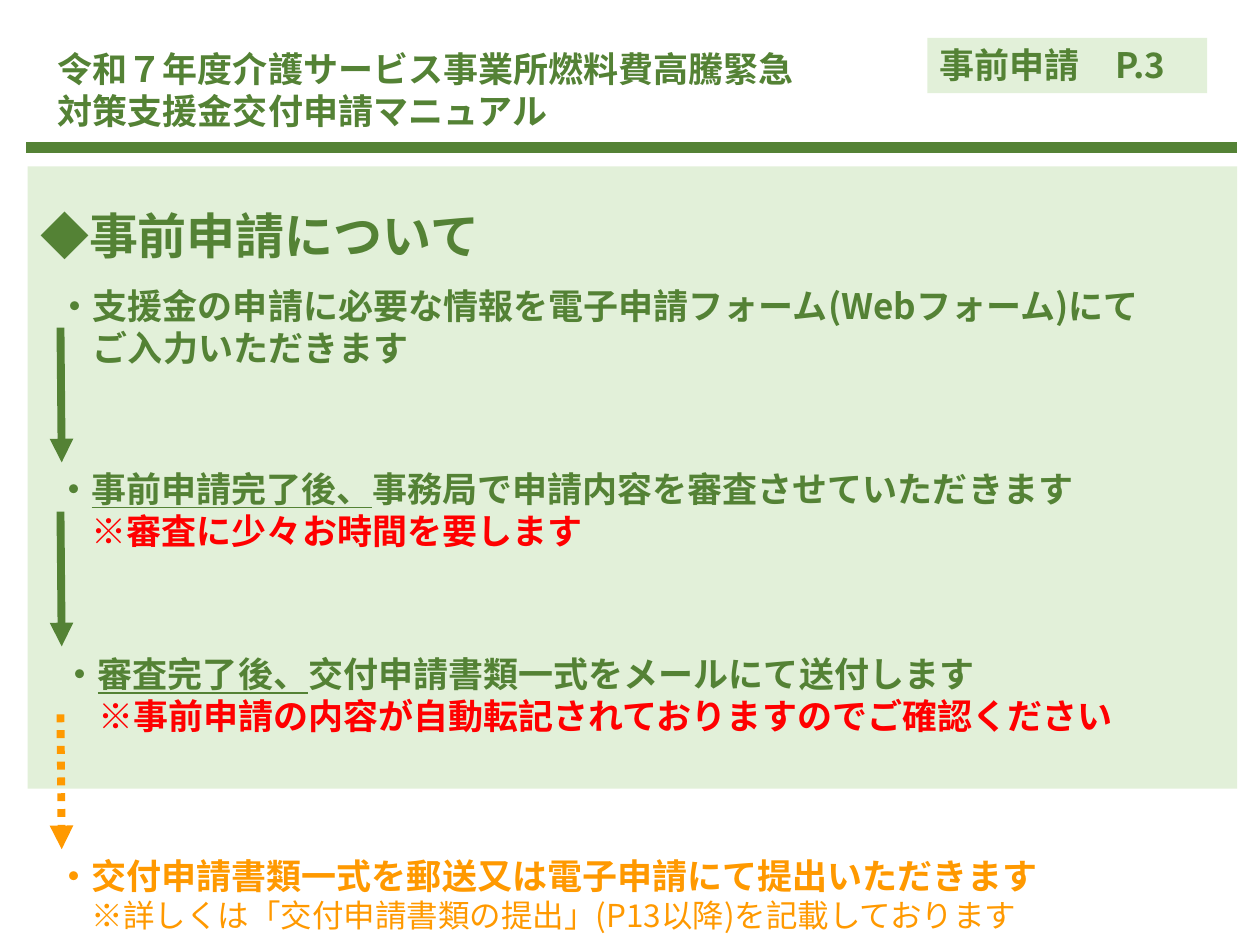
from dataclasses import dataclass
from lxml.etree import SubElement as Sub
from pptx import Presentation as Deck
from pptx.dml.color import RGBColor as Rgb
from pptx.enum.dml import MSO_LINE as Dash
from pptx.enum.shapes import MSO_CONNECTOR as Link, MSO_SHAPE as Form
from pptx.enum.text import MSO_ANCHOR as Anchor, MSO_AUTO_SIZE as Fit, PP_ALIGN as Align
from pptx.oxml.ns import qn
from pptx.util import Emu, Pt

SCALE = 9144


def px(n):
    return Emu(n * SCALE)


@dataclass(frozen=True)
class Theme:
    font: str = "Noto Sans CJK JP"
    green: str = "548235"
    pale: str = "E2F0D9"
    red: str = "FF0000"
    gold: str = "FF9900"
    head: int = 28
    body: int = 20
    note: int = 18
    rule: float = 6
    arrow: float = 4.5
    indent: int = 28


@dataclass(frozen=True)
class Run:
    text: str
    color: str
    size: int
    bold: bool = True
    under: bool = False


class Page:
    def __init__(self, slide, theme):
        self.slide = slide
        self.theme = theme

    def run(self, para, part):
        run = para.add_run()
        run.text = part.text
        font = run.font
        font.name = self.theme.font
        font.size = Pt(part.size)
        font.bold = part.bold
        font.underline = part.under
        font.color.rgb = Rgb.from_string(part.color)
        Sub(run._r.get_or_add_rPr(), qn("a:ea"), typeface=self.theme.font)

    def fill(self, frame, lines):
        frame.word_wrap = True
        frame.auto_size = Fit.SHAPE_TO_FIT_TEXT
        frame.vertical_anchor = Anchor.TOP
        for i, parts in enumerate(lines):
            para = frame.add_paragraph() if i else frame.paragraphs[0]
            para.alignment = Align.LEFT
            if i:
                para._p.get_or_add_pPr().set("marL", str(px(self.theme.indent)))
            for part in parts:
                self.run(para, part)

    def text(self, x, y, w, h, *lines):
        box = self.slide.shapes.add_textbox(px(x), px(y), px(w), px(h))
        self.fill(box.text_frame, lines)

    def panel(self, x, y, w, h, *lines):
        box = self.slide.shapes.add_shape(Form.RECTANGLE, px(x), px(y), px(w), px(h))
        box.shadow.inherit = False
        box.fill.solid()
        box.fill.fore_color.rgb = Rgb.from_string(self.theme.pale)
        box.line.fill.background()
        if lines:
            self.fill(box.text_frame, lines)

    def line(self, x, y, to_x, to_y, color, width):
        link = self.slide.shapes.add_connector(
            Link.STRAIGHT, px(x), px(y), px(to_x), px(to_y))
        link.line.color.rgb = Rgb.from_string(color)
        link.line.width = Pt(width)
        Sub(link._element.spPr, qn("a:effectLst"))
        return link.line

    def arrow(self, y, color, dash=None):
        line = self.line(48, y, 49, y + 107, color, self.theme.arrow)
        if dash:
            line.dash_style = dash
        Sub(line._get_or_add_ln(), qn("a:tailEnd"), type="triangle")


def main():
    deck = Deck()
    deck.slide_width, deck.slide_height = px(1000), px(750)
    look = Theme()
    page = Page(deck.slides.add_slide(deck.slide_layouts[6]), look)

    def green(text, under=False):
        return Run(text, look.green, look.body, under=under)

    def red(text):
        return Run(text, look.red, look.body)

    page.line(21, 117, 982, 117, look.green, look.rule)
    page.text(36, 33, 619, 77,
              [green("令和７年度介護サービス事業所燃料費高騰緊急対策支援金交付申請マニュアル")])
    page.panel(22, 132, 960, 494)
    page.text(22, 158, 665, 57, [Run("◆事前申請について", look.green, look.head)])
    page.panel(736, 30, 222, 44, [green("事前申請　P.3")])

    steps = [
        (36, 221,
         [green("・支援金の申請に必要な情報を電子申請フォーム(Webフォーム)にて")],
         [green("ご入力いただきます")]),
        (35, 366,
         [green("・"), green("事前申請完了後、", True),
          green("事務局で申請内容を審査させていただきます")],
         [red("※審査に少々お時間を要します")]),
        (40, 513,
         [green("・"), green("審査完了後、", True),
          green("交付申請書類一式をメールにて送付します")],
         [red("※事前申請の内容が自動転記されておりますのでご確認ください")]),
        (35, 673,
         [Run("・交付申請書類一式を郵送又は電子申請にて提出いただきます",
              look.gold, look.body)],
         [Run("※詳しくは「交付申請書類の提出」(P13以降)を記載しております",
              look.gold, look.note, bold=False)]),
    ]
    for x, y, *lines in steps:
        page.text(x, y, 923, 77, *lines)

    page.arrow(260, look.green)
    page.arrow(406, look.green)
    page.arrow(567, look.gold, Dash.ROUND_DOT)
    deck.save("out.pptx")


if __name__ == "__main__":
    main()
